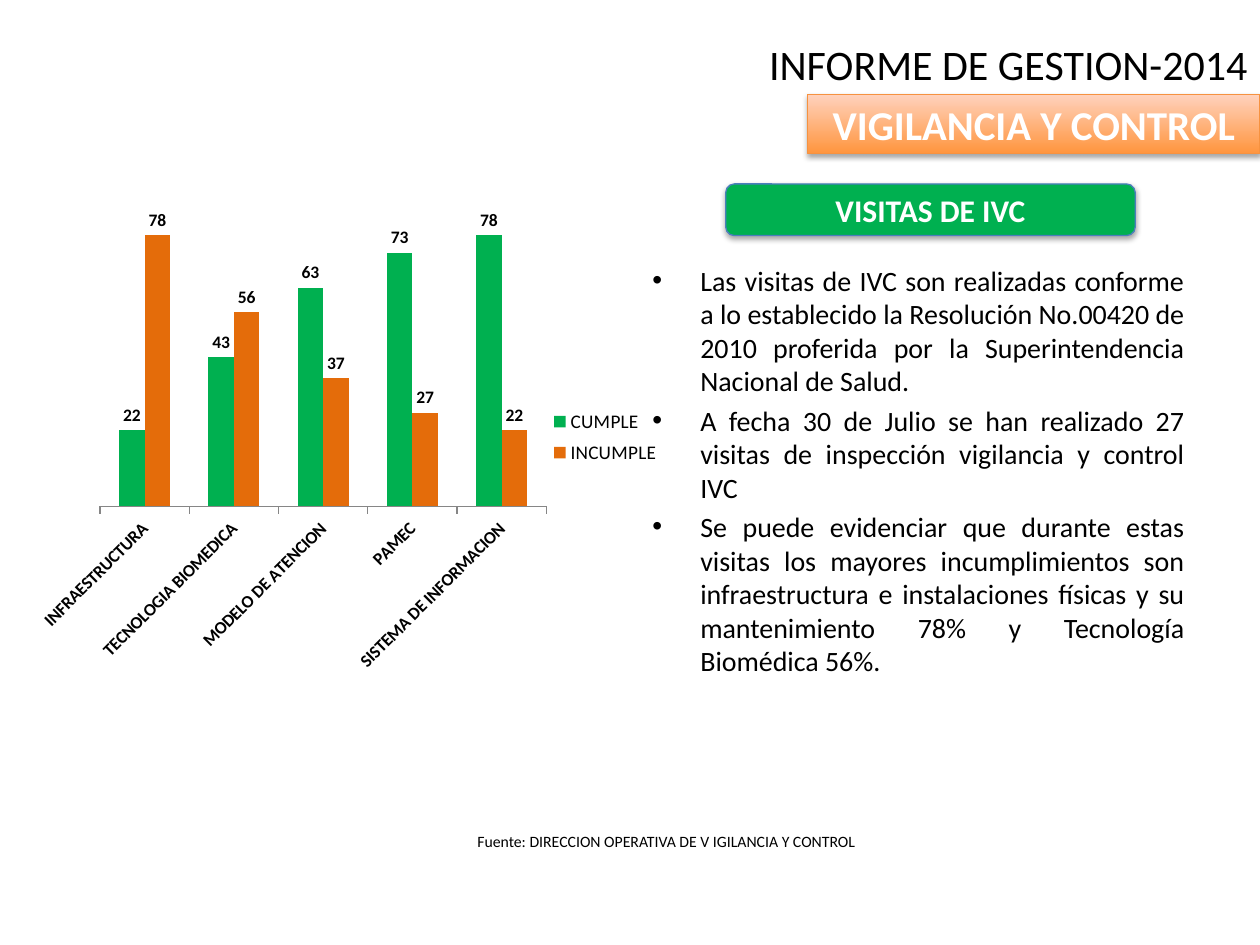
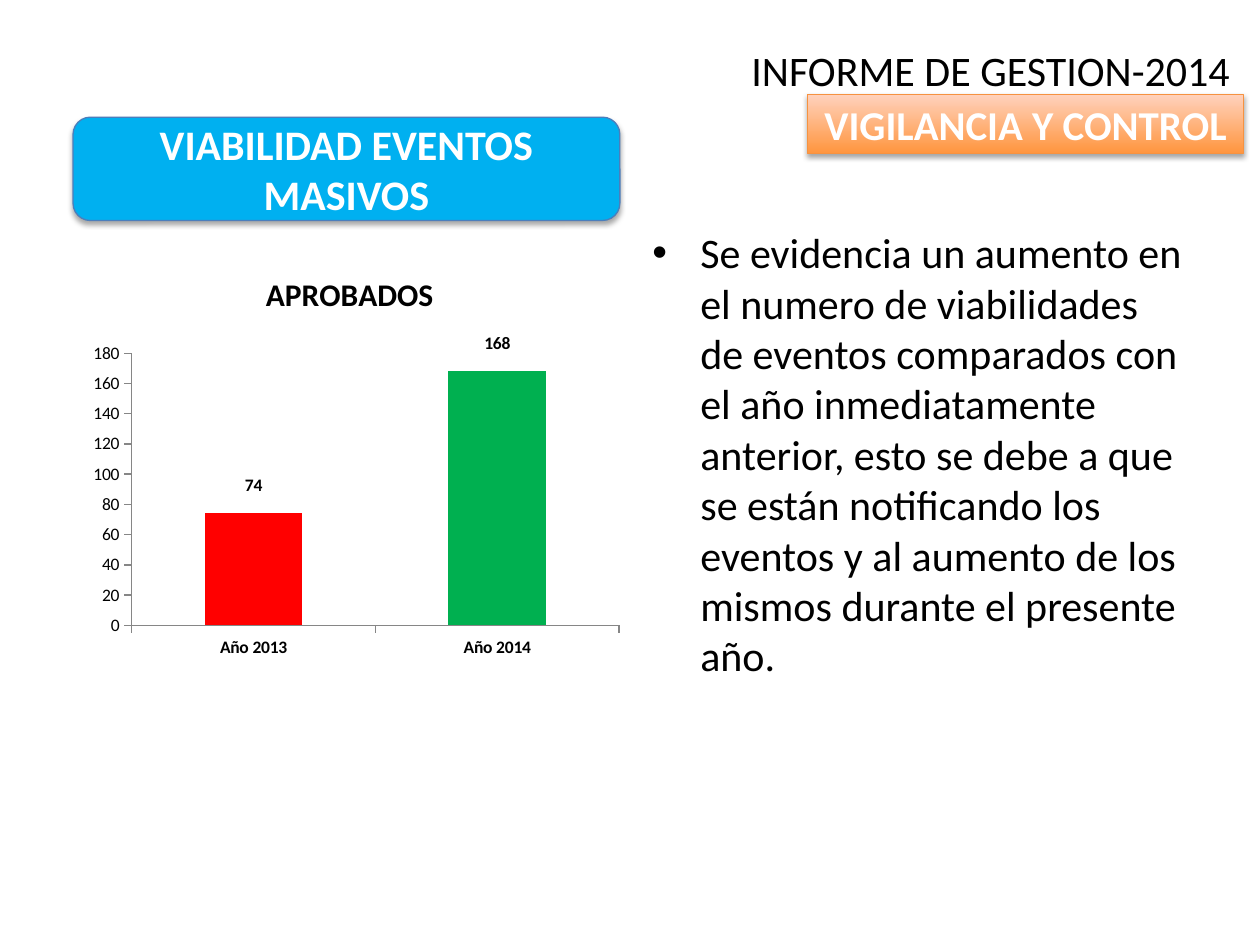
"""Build the two management-report slides on surveillance and control."""
from dataclasses import dataclass

from lxml.etree import SubElement
from pptx import Presentation
from pptx.chart.data import CategoryChartData
from pptx.dml.color import RGBColor
from pptx.enum.chart import XL_CHART_TYPE as ChartType, XL_LABEL_POSITION as LabelPosition
from pptx.enum.chart import XL_LEGEND_POSITION as LegendPosition, XL_TICK_MARK as TickMark
from pptx.enum.shapes import MSO_SHAPE as ShapeKind
from pptx.enum.text import MSO_ANCHOR as Anchor, PP_ALIGN as Align
from pptx.oxml import parse_xml
from pptx.oxml.ns import nsdecls, qn
from pptx.util import Inches, Pt


@dataclass(frozen=True)
class Theme:
    font: str = "Calibri"
    black: str = "000000"
    white: str = "FFFFFF"
    green: str = "00B050"
    orange: str = "E46C0A"
    red: str = "FF0000"
    blue: str = "00B0F0"
    pill_line: str = "4B7EBC"
    banner_line: str = "F69240"
    banner_bottom: str = "FF953E"
    banner_top: str = "FFD2BD"
    axis: str = "868686"
    title_size: float = 24
    banner_size: float = 23.4
    source_size: float = 9
    chart_size: float = 10
    legend_size: float = 11
    chart_title_size: float = 18


THEME = Theme()
TITLE = "INFORME DE GESTION-2014"
BANNER = "VIGILANCIA Y CONTROL"
BANNER_LEFT, BANNER_TOP, BANNER_HEIGHT = 6.41, 0.75, 0.47

SLIDES = [
    {
        "title_box": (0.75, 0.26, 9.25, 0.57),
        "banner_width": 3.59,
        "heading": ("VISITAS DE IVC", (5.76, 1.46, 3.25, 0.41), THEME.green, 18),
        "body_box": (5.08, 2.04, 4.42, 3.6),
        "body_size": 16,
        "body_align": Align.JUSTIFY,
        "body": [
            "Las visitas de IVC son realizadas conforme a lo establecido la Resolución "
            "No.00420 de 2010 proferida por la Superintendencia Nacional de Salud.",
            "A fecha 30 de Julio se han realizado 27 visitas de inspección vigilancia y control IVC",
            "Se puede evidenciar que durante estas visitas los mayores incumplimientos son "
            "infraestructura e instalaciones físicas y su mantenimiento 78% y Tecnología "
            "Biomédica 56%.",
        ],
        "source": ("Fuente: DIRECCION OPERATIVA DE V IGILANCIA Y CONTROL", (3.69, 6.55, 3.93, 0.25)),
        "chart": {
            "box": (0.22, 1.46, 5.21, 3.94),
            "plot": (0.11, 0.02, 0.68, 0.63),
            "legend": (0.79, 0.44, 0.18, 0.14),
            "categories": ["INFRAESTRUCTURA", "TECNOLOGIA BIOMEDICA", "MODELO DE ATENCION",
                           "PAMEC", "SISTEMA DE INFORMACION"],
            "series": [("CUMPLE", [22, 43, 63, 73, 78], THEME.green),
                       ("INCUMPLE", [78, 56, 37, 27, 22], THEME.orange)],
            "maximum": 90,
            "label_angle": -45,
        },
    },
    {
        "title_box": (0.5, 0.3, 9.36, 1.25),
        "banner_width": 3.46,
        "heading": ("VIABILIDAD EVENTOS MASIVOS", (0.58, 0.93, 4.34, 0.82), THEME.blue, 24),
        "body_box": (5.08, 1.75, 4.42, 4.95),
        "body_size": 24,
        "body_align": Align.LEFT,
        "body": [
            "Se evidencia un aumento en el numero de viabilidades de eventos comparados con el "
            "año inmediatamente anterior, esto se debe a que se están notificando los eventos y "
            "al aumento de los mismos durante el presente año.",
        ],
        "chart": {
            "box": (0.5, 1.99, 4.55, 3.54),
            "plot": (0.12, 0.23, 0.85, 0.61),
            "title": "APROBADOS",
            "categories": ["Año 2013", "Año 2014"],
            "series": [("APROBADOS", [74, 168], THEME.green)],
            "point_colors": [THEME.red, THEME.green],
            "label_lift": -0.03,
            "maximum": 180,
        },
    },
]


def color(code):
    return RGBColor.from_string(code)


def inches(box):
    return [Inches(length) for length in box]


def style_font(font, size, code=THEME.black, bold=False):
    font.name, font.size, font.bold = THEME.font, Pt(size), bold
    font.color.rgb = color(code)


def add_bullet(paragraph):
    properties = paragraph._p.get_or_add_pPr()
    properties.set("marL", str(Inches(0.38)))
    properties.set("indent", str(-Inches(0.38)))
    SubElement(properties, qn("a:buFont")).set("typeface", "Arial")
    SubElement(properties, qn("a:buChar")).set("char", "•")


def add_text(slide, texts, box, size, align=Align.LEFT, bullets=False):
    frame = slide.shapes.add_textbox(*inches(box)).text_frame
    frame.word_wrap = True
    for index, text in enumerate(texts):
        paragraph = frame.paragraphs[0] if index == 0 else frame.add_paragraph()
        paragraph.text = text
        paragraph.alignment = align
        if bullets:
            add_bullet(paragraph)
        if index:
            paragraph.space_before = Pt(0.2 * size)
        style_font(paragraph.font, size)


def add_label(slide, kind, text, box, size, line):
    shape = slide.shapes.add_shape(kind, *inches(box))
    shape.line.color.rgb = color(line)
    shape.line.width = Pt(0.75)
    shape.shadow.inherit = False
    shape._element.spPr.find(qn("a:effectLst")).append(parse_xml(
        f'<a:outerShdw {nsdecls("a")} blurRad="{Pt(3.1)}" dist="{Pt(1.8)}" dir="5400000" '
        f'rotWithShape="0"><a:srgbClr val="{THEME.black}"><a:alpha val="35000"/>'
        '</a:srgbClr></a:outerShdw>'))
    frame = shape.text_frame
    frame.word_wrap = kind == ShapeKind.ROUNDED_RECTANGLE
    frame.vertical_anchor = Anchor.MIDDLE
    paragraph = frame.paragraphs[0]
    paragraph.text = text
    paragraph.alignment = Align.CENTER
    style_font(paragraph.font, size, THEME.white, bold=True)
    return shape


def add_banner(slide, width):
    box = (BANNER_LEFT, BANNER_TOP, width, BANNER_HEIGHT)
    shape = add_label(slide, ShapeKind.RECTANGLE, BANNER, box, THEME.banner_size, THEME.banner_line)
    shape.fill.gradient()
    shape.fill.gradient_angle = 90
    stops = [(0, THEME.banner_bottom), (1, THEME.banner_top)]
    for stop, (position, code) in zip(shape.fill.gradient_stops, stops):
        stop.position = position
        stop.color.rgb = color(code)


def add_heading(slide, text, box, fill, size):
    shape = add_label(slide, ShapeKind.ROUNDED_RECTANGLE, text, box, size, THEME.pill_line)
    shape.fill.solid()
    shape.fill.fore_color.rgb = color(fill)


def manual_layout(**values):
    settings = "".join(f'<c:{name} val="{value}"/>' for name, value in values.items())
    return parse_xml(f'<c:layout {nsdecls("c")}><c:manualLayout>{settings}</c:manualLayout></c:layout>')


def place_part(element, index, box, **target):
    for layout in element.findall(qn("c:layout")):
        element.remove(layout)
    left, top, width, height = box
    element.insert(index, manual_layout(**target, xMode="edge", yMode="edge",
                                        x=left, y=top, w=width, h=height))


def style_axes(chart, content):
    category_axis, value_axis = chart.category_axis, chart.value_axis
    for axis in (category_axis, value_axis):
        axis.major_tick_mark = TickMark.OUTSIDE
        axis.minor_tick_mark = TickMark.NONE
        axis.has_major_gridlines = False
        axis.format.line.color.rgb = color(THEME.axis)
        axis.format.line.width = Pt(0.75)
        style_font(axis.tick_labels.font, THEME.chart_size, bold=axis is category_axis)
    value_axis.minimum_scale, value_axis.maximum_scale = 0, content["maximum"]
    value_axis.visible = len(content["series"]) == 1
    if "label_angle" in content:
        body = category_axis._element.find(qn("c:txPr")).find(qn("a:bodyPr"))
        body.set("rot", str(content["label_angle"] * 60000))
        body.set("vert", "horz")


def style_series(series, code, content):
    series.format.fill.solid()
    series.format.fill.fore_color.rgb = color(code)
    labels = series.data_labels
    labels.show_value = True
    labels.position = LabelPosition.OUTSIDE_END
    style_font(labels.font, THEME.chart_size, bold=True)
    for leader in labels._element.findall(qn("c:showLeaderLines")):
        leader.set("val", "0")
    for index, point_code in enumerate(content.get("point_colors", [])):
        point = series.points[index]
        point.format.fill.solid()
        point.format.fill.fore_color.rgb = color(point_code)
        style_font(point.data_label.font, THEME.chart_size, bold=True)
        point.data_label.position = LabelPosition.OUTSIDE_END
    for label in labels._element.findall(qn("c:dLbl")):
        label.insert(1, manual_layout(x=0, y=content["label_lift"]))


def add_chart(slide, content):
    data = CategoryChartData()
    data.categories = content["categories"]
    for name, values, _ in content["series"]:
        data.add_series(name, values)
    frame = slide.shapes.add_chart(ChartType.COLUMN_CLUSTERED, *inches(content["box"]), data)
    chart = frame.chart
    style_font(chart.font, THEME.chart_size)
    chart.has_title = "title" in content
    if chart.has_title:
        paragraph = chart.chart_title.text_frame.paragraphs[0]
        paragraph.text = content["title"]
        style_font(paragraph.font, THEME.chart_title_size, bold=True)
    chart.has_legend = "legend" in content
    if chart.has_legend:
        chart.legend.position = LegendPosition.RIGHT
        chart.legend.include_in_layout = False
        style_font(chart.legend.font, THEME.legend_size)
        place_part(chart.legend._element, 1, content["legend"])
    plot = chart.plots[0]
    plot.gap_width, plot.overlap, plot.vary_by_categories = 150, 0, False
    place_part(chart._chartSpace.chart.plotArea, 0, content["plot"], layoutTarget="inner")
    style_axes(chart, content)
    for series, (_, _, code) in zip(plot.series, content["series"]):
        style_series(series, code, content)


def build_slide(presentation, content):
    slide = presentation.slides.add_slide(presentation.slide_layouts[6])
    add_text(slide, [TITLE], content["title_box"], THEME.title_size, Align.RIGHT)
    add_banner(slide, content["banner_width"])
    add_chart(slide, content["chart"])
    add_text(slide, content["body"], content["body_box"], content["body_size"],
             content["body_align"], bullets=True)
    add_heading(slide, *content["heading"])
    if "source" in content:
        text, box = content["source"]
        add_text(slide, [text], box, THEME.source_size)


def main():
    presentation = Presentation()
    presentation.slide_width, presentation.slide_height = Inches(10), Inches(7.5)
    for content in SLIDES:
        build_slide(presentation, content)
    presentation.save("out.pptx")


if __name__ == "__main__":
    main()
